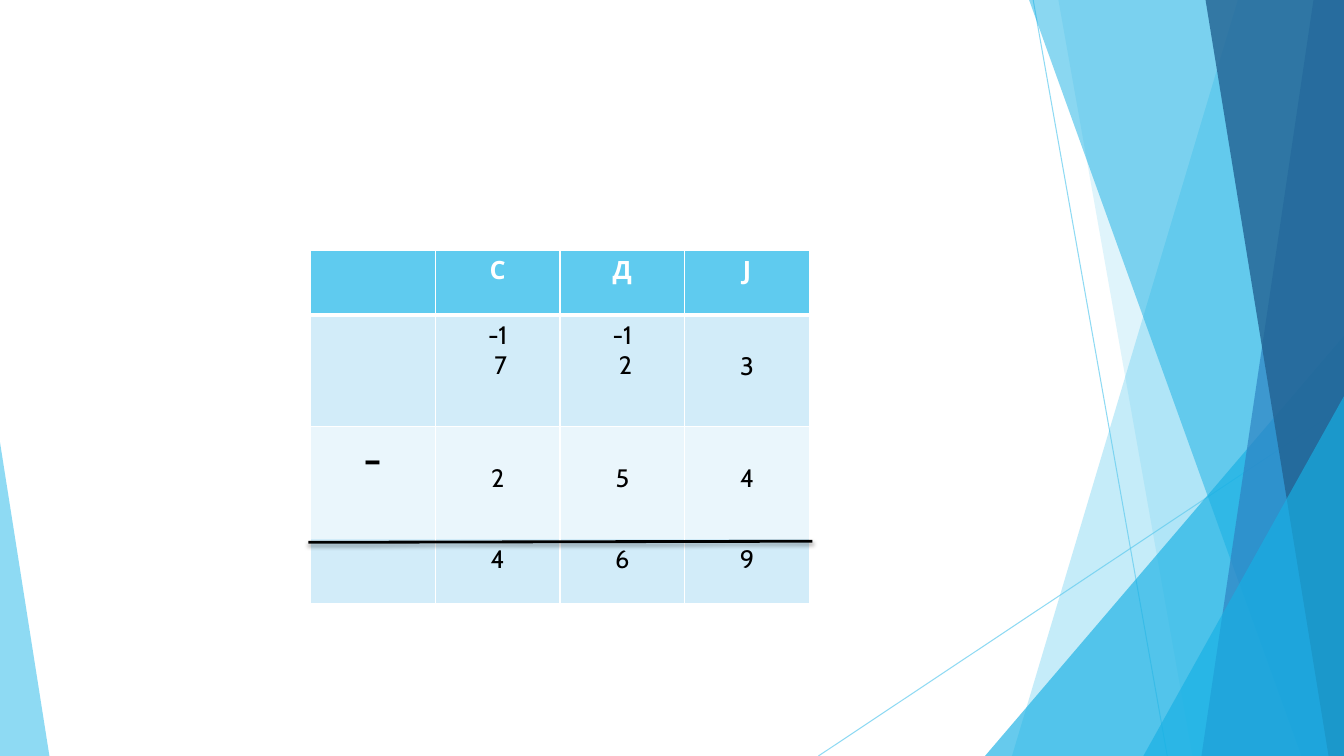
"""Build a slide with a column subtraction table beside blue facets."""
from lxml.etree import SubElement
from pptx import Presentation
from pptx.dml.color import RGBColor
from pptx.enum.shapes import MSO_CONNECTOR, MSO_SHAPE
from pptx.enum.text import PP_ALIGN
from pptx.oxml.ns import qn
from pptx.util import Pt

WHITE = RGBColor(255, 255, 255)
BLACK = RGBColor(0, 0, 0)
SKY = RGBColor(0x5F, 0xCB, 0xEF)
AQUA = RGBColor(0x17, 0xB0, 0xE4)
BLUE = RGBColor(0x2E, 0x83, 0xC3)
NAVY = RGBColor(0x22, 0x62, 0x92)
PALE = RGBColor(0xD2, 0xEC, 0xF9)
MIST = RGBColor(0xEA, 0xF6, 0xFC)
WIDE, HIGH = 960, 540


class Deck:
    """Hold the style and the current slide."""

    font, size = "Cabin", 18

    def __init__(self):
        """Open one blank slide."""
        self.file = Presentation()
        self.file.slide_width, self.file.slide_height = Pt(WIDE), Pt(HIGH)
        self.slide = self.file.slides.add_slide(self.file.slide_layouts[6])
        self.shapes = self.slide.shapes

    def fade(self, node, alpha):
        """Set the opacity of the colour in a node, in percent."""
        tone = next(node.iter(qn("a:srgbClr")))
        SubElement(tone, qn("a:alpha"), val=str(alpha * 1000))

    def paint(self, shape, color, alpha):
        """Fill a shape with a see-through colour and no outline."""
        shape.shadow.inherit = False
        shape.fill.solid()
        shape.fill.fore_color.rgb = color
        shape.line.fill.background()
        self.fade(shape._element.spPr, alpha)

    def facet(self, top, base, color, alpha):
        """Draw a full-height facet that ends at the right edge."""
        form = self.shapes.build_freeform(Pt(top), 0)
        spots = [(WIDE, 0), (WIDE, HIGH), (base, HIGH)]
        form.add_line_segments([(Pt(x), Pt(y)) for x, y in spots])
        self.paint(form.convert_to_shape(), color, alpha)

    def wedge(self, left, top, width, tip, color, alpha):
        """Draw a triangle that stands on the bottom edge."""
        shape = self.shapes.add_shape(
            MSO_SHAPE.ISOSCELES_TRIANGLE,
            Pt(left), Pt(top), Pt(width), Pt(HIGH - top))
        shape.adjustments[0] = tip
        self.paint(shape, color, alpha)

    def line(self, start, end, color, width, alpha=100, shade=False):
        """Draw a straight line, with a soft shadow if asked."""
        spots = [Pt(n) for n in (*start, *end)]
        line = self.shapes.add_connector(MSO_CONNECTOR.STRAIGHT, *spots)
        line.line.color.rgb = color
        line.line.width = Pt(width)
        props = line._element.spPr
        self.fade(props, alpha)
        effect = SubElement(props, qn("a:effectLst"))
        if shade:
            cast = SubElement(
                effect, qn("a:outerShdw"), blurRad=str(Pt(3)),
                dist=str(Pt(2)), dir="5400000", rotWithShape="0")
            SubElement(cast, qn("a:srgbClr"), val=str(BLACK))
            self.fade(cast, 35)

    def edge(self, cell, side, width):
        """Draw one white cell border, or none at zero width."""
        props = cell._tc.get_or_add_tcPr()
        rim = SubElement(props, qn("a:ln" + side), w=str(Pt(width)))
        if width:
            fill = SubElement(rim, qn("a:solidFill"))
            SubElement(fill, qn("a:srgbClr"), val=str(WHITE))
        else:
            SubElement(rim, qn("a:noFill"))

    def label(self, cell, lines, color, bold):
        """Put centred lines in a cell, nudging the later ones."""
        frame = cell.text_frame
        for i, text in enumerate(lines):
            para = frame.add_paragraph() if i else frame.paragraphs[0]
            para.alignment = PP_ALIGN.CENTER
            if i:
                para._p.get_or_add_pPr().set("marL", str(Pt(4.5)))
            run = para.add_run()
            run.text = text
            run.font.name = self.font
            run.font.size = Pt(32 if text == "-" else self.size)
            run.font.bold = bold
            run.font.color.rgb = color

    def table(self, left, top, width, rows):
        """Draw a table from rows of height, fill, borders and cells."""
        count = len(rows[0][-1])
        table = self.shapes.add_table(
            len(rows), count, Pt(left), Pt(top), Pt(width),
            Pt(sum(row[0] for row in rows))).table
        table.horz_banding = False
        for col in table.columns:
            col.width = Pt(width / count)
        for r, (high, fill, above, below, texts) in enumerate(rows):
            table.rows[r].height = Pt(high)
            for c, text in enumerate(texts):
                cell = table.cell(r, c)
                for side, rim in zip("LRTB", (1, 1, above, below)):
                    self.edge(cell, side, rim)
                cell.fill.solid()
                cell.fill.fore_color.rgb = fill
                lines = text.split()
                if r in (1, 2) and len(lines) == 1 and text != "-":
                    cell.margin_top = Pt(25.6)
                self.label(cell, lines, BLACK if r else WHITE, not r)


def main():
    """Draw the slide and save it."""
    deck = Deck()
    deck.line((738, 0), (833.8, HIGH), SKY, 0.75, 70)
    deck.line((WIDE, 290.2), (584.6, HIGH), SKY, 0.75, 70)
    deck.facet(884.2, 722.9, SKY, 36)
    deck.facet(756, 851.8, SKY, 20)
    deck.wedge(703.6, 239.8, 256.4, 1, AQUA, 66)
    deck.facet(735.1, 929.5, AQUA, 50)
    deck.facet(938.2, 858.2, BLUE, 70)
    deck.facet(861.1, 949, NAVY, 80)
    deck.wedge(816.7, 283, 143.3, 1, AQUA, 66)
    deck.wedge(0, 316, 35.3, 0, SKY, 70)
    deck.table(221.8, 178.9, 356.4, [
        (46, SKY, 1, 3, ["", "С", "Д", "Ј"]),
        (80, PALE, 3, 1, ["", "-1 7", "-1 2", "3"]),
        (80, MIST, 1, 0, ["-", "2", "5", "4"]),
        (46, PALE, 0, 1, ["", "4", "6", "9"]),
    ])
    deck.line((220.3, 387.4), (580.3, 386.6), BLACK, 2, shade=True)
    deck.file.save("out.pptx")


if __name__ == "__main__":
    main()
